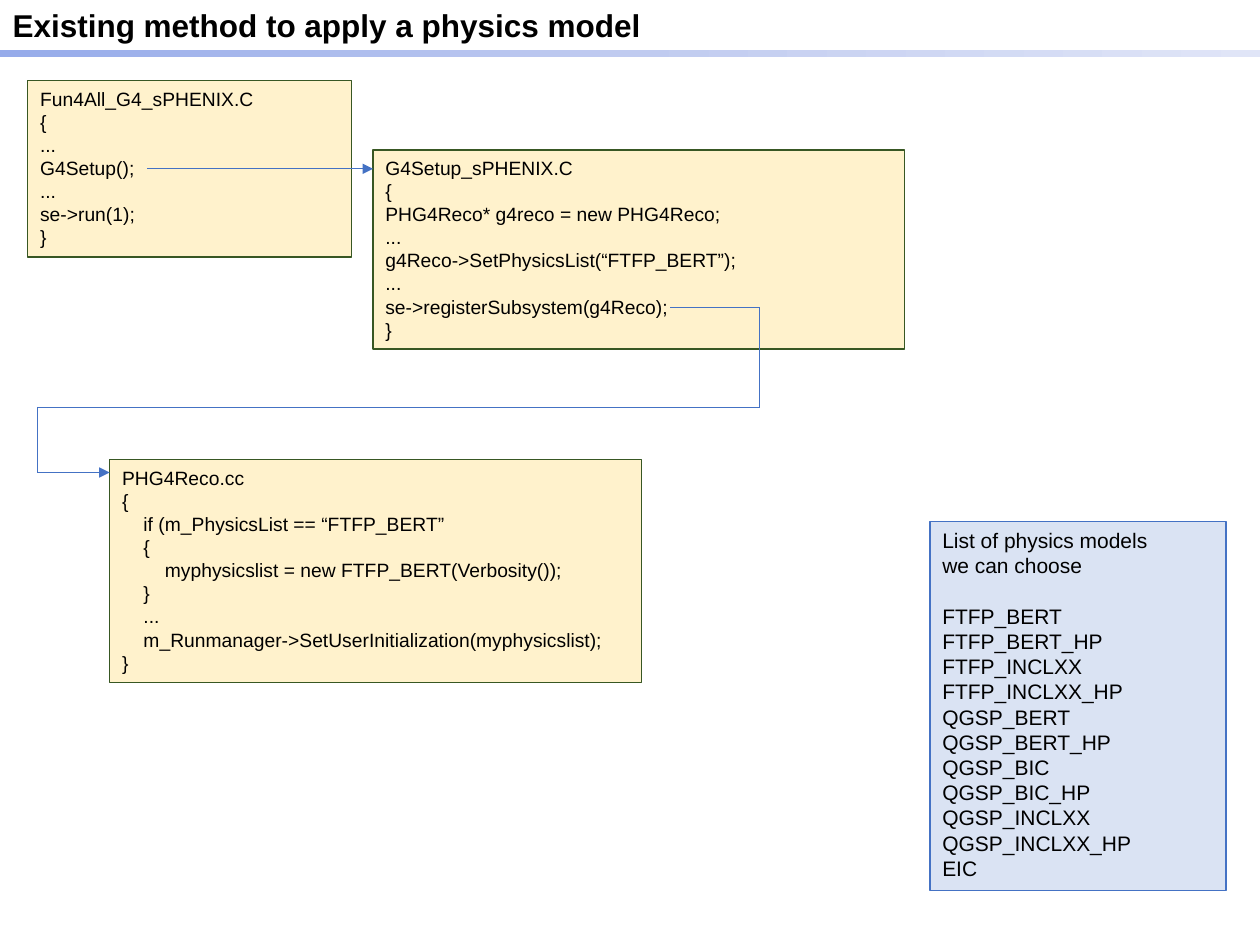
"""Build a slide showing how a physics model is applied in the simulation code."""
import pptx
import pptx.util
import pptx.dml.color
import pptx.enum.dml
import pptx.enum.shapes
import pptx.enum.text
import pptx.oxml
import pptx.oxml.ns
from pptx.util import Inches

THEME = {
    "font": "Arial", "title": 18, "code": 11, "list": 12,
    "text": "000000", "code_fill": "FFF2CC", "code_line": "385723",
    "list_fill": "DAE3F3", "blue": "4472C4",
    "band": ("96ABEA", "C0CBF0", "E0E5F7"),
    "border": 0.75, "arrow": 0.5, "indent": 0.17, "gap": 14.4,
}

TITLE = "Existing method to apply a physics model"

CODE_BOXES = [
    ((0.22, 0.64, 2.57, 1.4), [
        (0, "Fun4All_G4_sPHENIX.C"), (0, "{"), (0, "..."), (0, "G4Setup();"),
        (0, "..."), (0, "se->run(1);"), (0, "}")]),
    ((2.96, 1.19, 4.22, 1.58), [
        (0, "G4Setup_sPHENIX.C"), (0, "{"),
        (0, "PHG4Reco* g4reco = new PHG4Reco;"), (0, "..."),
        (0, "g4Reco->SetPhysicsList(“FTFP_BERT”);"), (0, "..."),
        (0, "se->registerSubsystem(g4Reco);"), (0, "}")]),
    ((0.87, 3.65, 4.22, 1.77), [
        (0, "PHG4Reco.cc"), (0, "{"),
        (1, "if (m_PhysicsList == “FTFP_BERT”"), (1, "{"),
        (2, "myphysicslist = new FTFP_BERT(Verbosity());"), (1, "}"),
        (1, "..."), (1, "m_Runmanager->SetUserInitialization(myphysicslist);"),
        (0, "}")]),
]

LIST_AREA = (7.38, 4.14, 2.35, 2.93)
LIST_HEADING = ["List of physics models", "we can choose"]
MODELS = ["FTFP_BERT", "FTFP_BERT_HP", "FTFP_INCLXX", "FTFP_INCLXX_HP",
          "QGSP_BERT", "QGSP_BERT_HP", "QGSP_BIC", "QGSP_BIC_HP",
          "QGSP_INCLXX", "QGSP_INCLXX_HP", "EIC"]

CALL_ROUTES = [
    [(1.17, 1.34), (2.96, 1.34)],
    [(5.32, 2.44), (6.03, 2.44), (6.03, 3.23), (0.3, 3.23), (0.3, 3.75), (0.87, 3.75)],
]


def rgb(value):
    return pptx.dml.color.RGBColor.from_string(value)


def add_text(tf, text, size, bold=False, level=0, first=False, after=0):
    p = tf.paragraphs[0] if first else tf.add_paragraph()
    p.alignment = pptx.enum.text.PP_ALIGN.LEFT
    p.line_spacing = 1.0
    p.space_before = pptx.util.Pt(0)
    p.space_after = pptx.util.Pt(after)
    if level:
        p._p.get_or_add_pPr().set("marL", str(Inches(level * THEME["indent"])))
    r = p.add_run()
    r.text = text
    r.font.name = THEME["font"]
    r.font.size = pptx.util.Pt(size)
    r.font.bold = bold
    r.font.color.rgb = rgb(THEME["text"])


def set_frame(tf, wrap=True):
    tf.word_wrap = wrap
    tf.auto_size = pptx.enum.text.MSO_AUTO_SIZE.SHAPE_TO_FIT_TEXT
    tf.vertical_anchor = pptx.enum.text.MSO_ANCHOR.TOP
    tf.margin_left = tf.margin_right = Inches(0.1)
    tf.margin_top = tf.margin_bottom = Inches(0.05)


def add_rect(s, area):
    sp = s.shapes.add_shape(pptx.enum.shapes.MSO_SHAPE.RECTANGLE, *map(Inches, area))
    sp.shadow.inherit = False
    return sp


def add_box(s, area, fill, line):
    sp = add_rect(s, area)
    sp.fill.solid()
    sp.fill.fore_color.rgb = rgb(fill)
    sp.line.color.rgb = rgb(line)
    sp.line.width = pptx.util.Pt(THEME["border"])
    set_frame(sp.text_frame)
    return sp.text_frame


def add_band(s):
    sp = add_rect(s, (0, 0.4, 10, 0.05))
    sp.line.fill.background()
    sp.fill.gradient()
    sp.fill.gradient_angle = 0
    stops = pptx.oxml.ns.qn("a:gsLst")
    gs_list = next(sp._element.spPr.iter(stops))
    for gs in list(gs_list):
        gs_list.remove(gs)
    for i, color in enumerate(THEME["band"]):
        gs_list.append(pptx.oxml.parse_xml(
            f'<a:gs {pptx.oxml.ns.nsdecls("a")} pos="{i * 50000}">'
            f'<a:srgbClr val="{color}"/></a:gs>'))


def add_route(s, points):
    for start, end in zip(points, points[1:]):
        line = s.shapes.add_connector(
            pptx.enum.shapes.MSO_CONNECTOR.STRAIGHT, *map(Inches, start + end))
        line.line.color.rgb = rgb(THEME["blue"])
        line.line.width = pptx.util.Pt(THEME["arrow"])
        sp_pr = line._element.spPr
        pptx.oxml.ns.qn("a:effectLst")
        sp_pr.append(sp_pr.makeelement(pptx.oxml.ns.qn("a:effectLst"), {}))
    ln = line.line._get_or_add_ln()
    ln.append(ln.makeelement(pptx.oxml.ns.qn("a:tailEnd"), {"type": "triangle"}))


def main():
    prs = pptx.Presentation()
    prs.slide_width, prs.slide_height = Inches(10), Inches(7.5)
    s = prs.slides.add_slide(prs.slide_layouts[5])

    title = s.shapes.title
    title.left, title.top, title.width, title.height = map(Inches, (0, 0, 5.67, 0.4))
    set_frame(title.text_frame, wrap=False)
    add_text(title.text_frame, TITLE, THEME["title"], bold=True, first=True)

    tf = add_box(s, LIST_AREA, THEME["list_fill"], THEME["blue"])
    for i, text in enumerate(LIST_HEADING + MODELS):
        last_heading = i == len(LIST_HEADING) - 1
        add_text(tf, text, THEME["list"], first=i == 0,
                 after=THEME["gap"] if last_heading else 0)

    for area, lines in CODE_BOXES:
        tf = add_box(s, area, THEME["code_fill"], THEME["code_line"])
        for i, (level, text) in enumerate(lines):
            add_text(tf, text, THEME["code"], level=level, first=i == 0)

    for points in CALL_ROUTES:
        add_route(s, points)
    add_band(s)
    prs.save("out.pptx")


if __name__ == "__main__":
    main()
